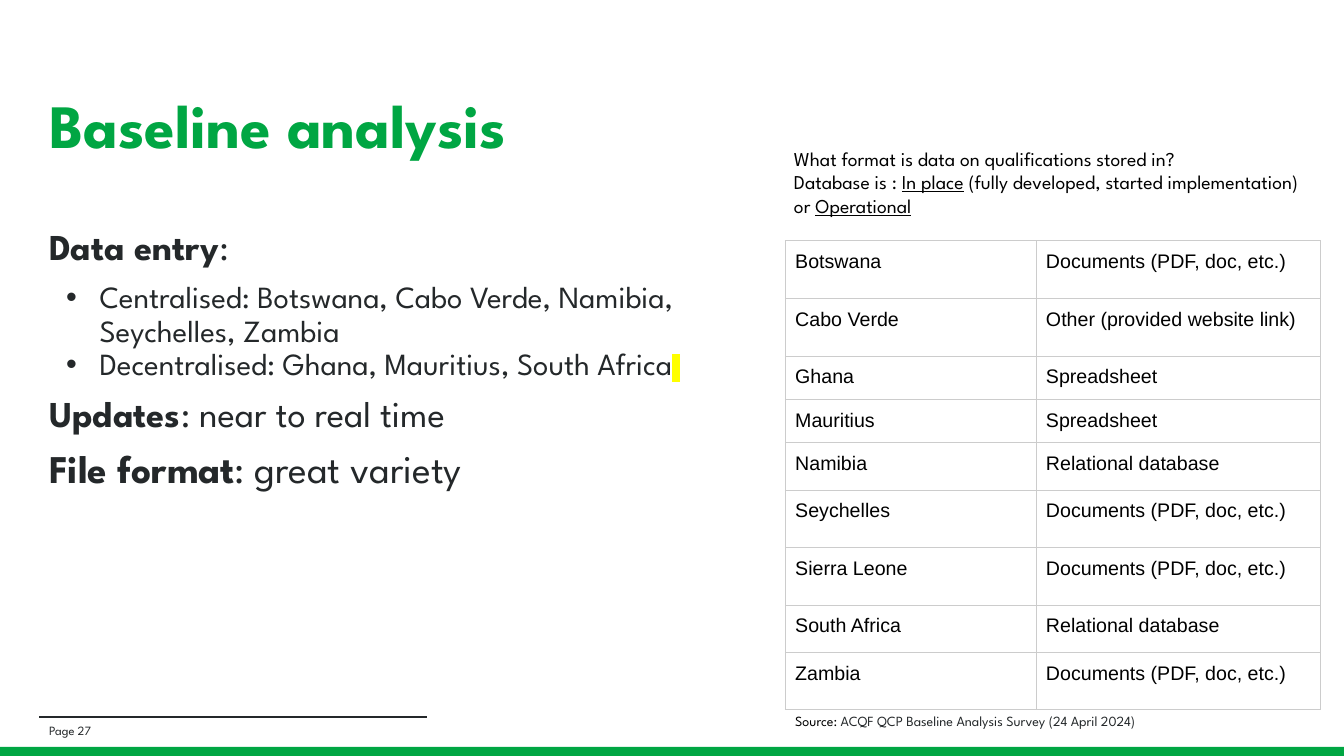
from lxml.etree import SubElement
from pptx import Presentation
from pptx.dml.color import RGBColor
from pptx.enum.shapes import MSO_CONNECTOR as Connector, MSO_SHAPE as Shape
from pptx.enum.text import MSO_ANCHOR as Anchor
from pptx.oxml import parse_xml
from pptx.oxml.ns import nsdecls, qn
from pptx.util import Cm, Pt

GREEN, DARK, BLACK, GREY = "00A643", "24282A", "000000", "CCCCCC"
rgb = RGBColor.from_string


def add_text(para, text, size, color=DARK, font="League Spartan",
             bold=False, underline=False, highlight=None):
    span = para.add_run()
    span.text = text
    span.font.size = Pt(size)
    span.font.bold = bold
    span.font.underline = underline
    span.font.color.rgb = rgb(color)
    span.font.name = font
    if highlight:
        mark = parse_xml(f'<a:highlight {nsdecls("a")}><a:srgbClr val="{highlight}"/></a:highlight>')
        span.font.fill  # colour is already set, so the mark goes right before the typeface
        span._r.rPr.find(qn("a:latin")).addprevious(mark)


def add_box(left, top, width, height, anchor=Anchor.TOP, margin=0.13):
    """Add a wrapping text box, measured in cm, and return its text frame."""
    frame = page.shapes.add_textbox(Cm(left), Cm(top), Cm(width), Cm(height)).text_frame
    frame.word_wrap = True
    frame.vertical_anchor = anchor
    frame.margin_left = frame.margin_right = Cm(0.25)
    frame.margin_top = frame.margin_bottom = Cm(margin)
    return frame


deck = Presentation()
deck.slide_width, deck.slide_height = Cm(33.87), Cm(19.05)
page = deck.slides.add_slide(deck.slide_layouts[6])

# Footer bar and rule
bar = page.shapes.add_shape(Shape.RECTANGLE, Cm(-0.08), Cm(18.82), Cm(34.04), Cm(0.33))
bar.shadow.inherit = False
bar.fill.solid()
bar.fill.fore_color.rgb = rgb(GREEN)
bar.line.fill.background()

rule = page.shapes.add_connector(Connector.STRAIGHT, Cm(0.99), Cm(18.06), Cm(10.77), Cm(18.06))
rule.line.color.rgb = rgb(DARK)
rule.line.width = Pt(1.5)
SubElement(rule._element.spPr, qn("a:effectLst"))

# Title
title = add_box(0.99, 1.7, 31.85, 3.1, Anchor.MIDDLE).paragraphs[0]
title.line_spacing = 0.9
add_text(title, "Baseline analysis", 44, GREEN, bold=True)

# Findings: bold heading, rest of the line, size, bulleted, space before
findings = [
    ("Data entry", ":", 26, False, 0),
    ("", "Centralised: Botswana, Cabo Verde, Namibia, Seychelles, Zambia", 22, True, 10),
    ("", "Decentralised: Ghana, Mauritius, South Africa", 22, True, 0),
    ("Updates", ": near to real time", 26, False, 10),
    ("File format", ": great variety", 28, False, 10),
]
body = add_box(0.99, 5.64, 17.83, 10.95)
for number, (heading, rest, size, bulleted, gap) in enumerate(findings):
    para = body.add_paragraph() if number else body.paragraphs[0]
    para.line_spacing = 0.9
    para.space_before = Pt(gap)
    if bulleted:
        properties = para._p.get_or_add_pPr()
        properties.set("marL", str(Cm(1.27)))
        properties.set("indent", str(Cm(-0.84)))
        color = SubElement(properties, qn("a:buClr"))
        SubElement(color, qn("a:srgbClr"), val=DARK)
        SubElement(properties, qn("a:buFont"), typeface="Arial")
        SubElement(properties, qn("a:buChar"), char="•")
    if heading:
        add_text(para, heading, size, bold=True)
    add_text(para, rest, size)
add_text(body.paragraphs[2], " ", 22, highlight="FFFF00")

page_number = add_box(0.99, 18.16, 10.31, 0.48, Anchor.MIDDLE)
add_text(page_number.paragraphs[0], "Page 27", 9)

# Storage formats by country, with row heights in cm
formats = [
    ("Botswana", "Documents (PDF, doc, etc.)", 1.45),
    ("Cabo Verde", "Other (provided website link)", 1.45),
    ("Ghana", "Spreadsheet", 1.07),
    ("Mauritius", "Spreadsheet", 1.07),
    ("Namibia", "Relational database", 1.19),
    ("Seychelles", "Documents (PDF, doc, etc.)", 1.45),
    ("Sierra Leone", "Documents (PDF, doc, etc.)", 1.45),
    ("South Africa", "Relational database", 1.19),
    ("Zambia", "Documents (PDF, doc, etc.)", 1.45),
]
height = sum(row[2] for row in formats)
table = page.shapes.add_table(len(formats), 2, Cm(19.79), Cm(6.07), Cm(13.48), Cm(height)).table
table.first_row = table.horz_banding = False
table.columns[0].width, table.columns[1].width = Cm(6.32), Cm(7.16)
for row, (country, storage, row_height) in zip(table.rows, formats):
    row.height = Cm(row_height)
    for cell, text in zip(row.cells, (country, storage)):
        cell.margin_left = cell.margin_right = cell.margin_top = cell.margin_bottom = Cm(0.25)
        cell.fill.background()
        for place, side in enumerate(("lnL", "lnR", "lnT", "lnB")):
            border = parse_xml(
                f'<a:{side} {nsdecls("a")} w="{Pt(0.75)}"><a:solidFill>'
                f'<a:srgbClr val="{GREY}"/></a:solidFill></a:{side}>')
            cell._tc.get_or_add_tcPr().insert(place, border)
        add_text(cell.text_frame.paragraphs[0], text, 14, BLACK, "Arial")

# Question above the table and source below it
question = add_box(19.76, 3.45, 13.46, 2.31, margin=0.25)
add_text(question.paragraphs[0], "What format is data on qualifications stored in?", 14, BLACK)
status = question.add_paragraph()
for text, underline in [("Database is : ", False), ("In place", True),
                        (" (fully developed, started implementation) or ", False),
                        ("Operational", True)]:
    add_text(status, text, 14, BLACK, underline=underline)

source = add_box(19.79, 17.73, 14.02, 1.3, margin=0.25).paragraphs[0]
add_text(source, "Source: ", 10, BLACK)
add_text(source, "ACQF QCP Baseline Analysis Survey (24 April 2024)", 10)

deck.save("out.pptx")
